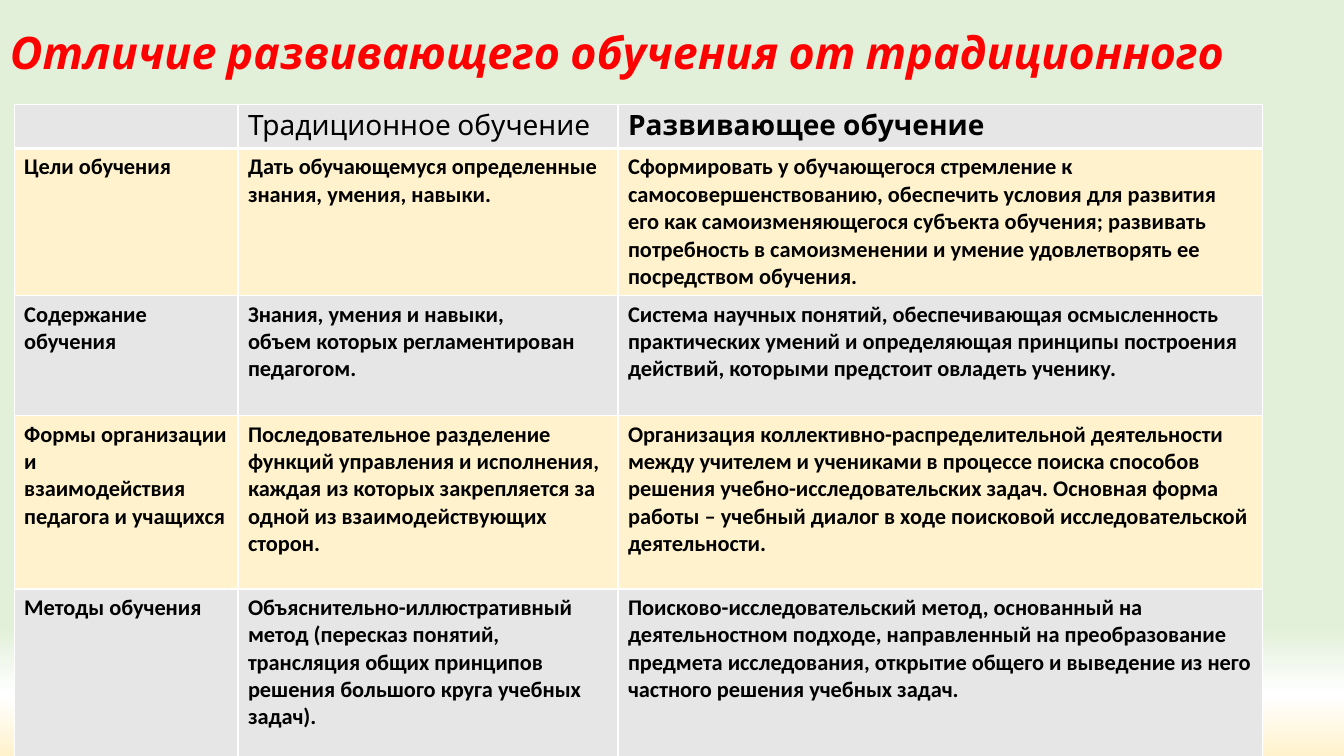
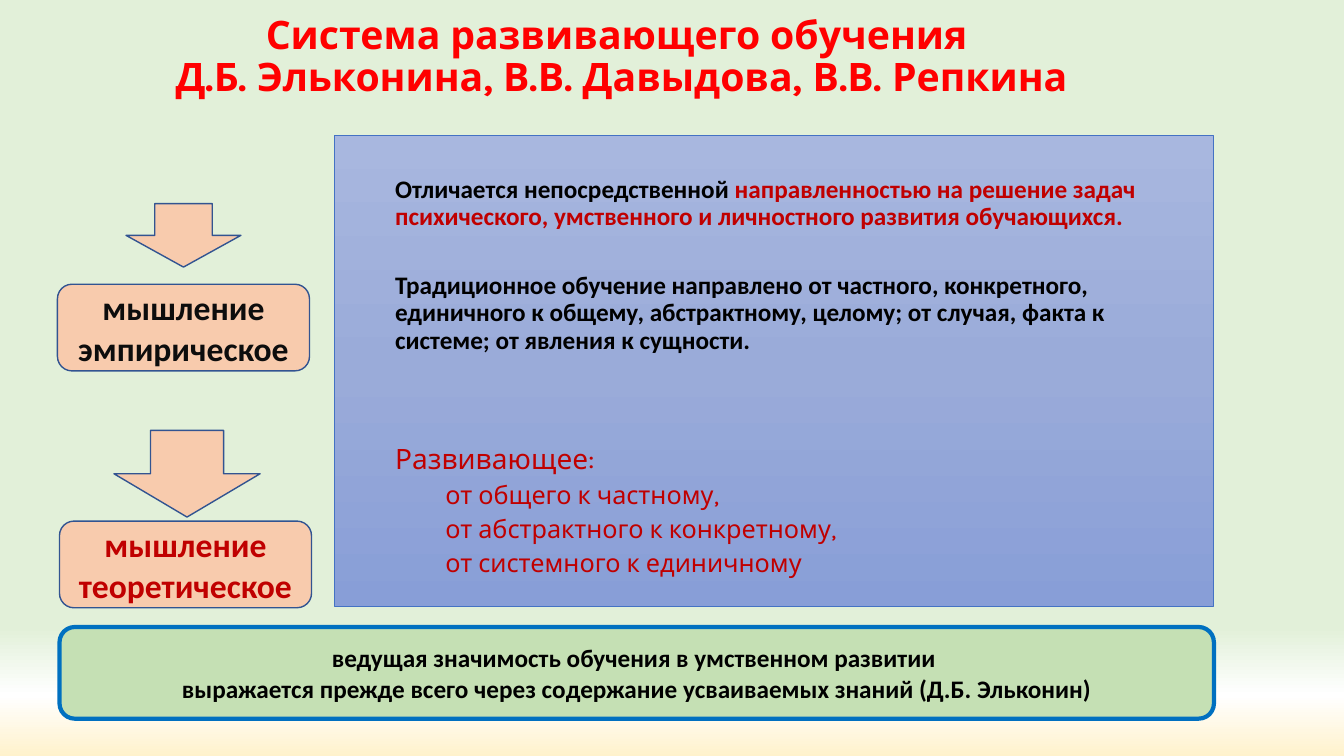
"""Build two slides comparing developmental and traditional teaching."""

import dataclasses

import pptx
import pptx.dml.color
import pptx.enum.shapes
import pptx.enum.text
import pptx.oxml
import pptx.oxml.ns
import pptx.util

Inches = pptx.util.Inches
Pt = pptx.util.Pt
ALIGN = pptx.enum.text.PP_ALIGN
ANCHOR = pptx.enum.text.MSO_ANCHOR
SHAPE = pptx.enum.shapes.MSO_SHAPE


@dataclasses.dataclass(frozen=True)
class Theme:
    """Colours, fonts and type sizes of the deck."""

    display_font: str = "Karla"
    body_font: str = "Calibri"
    title: str = "FF0000"
    ink: str = "000000"
    soft_ink: str = "0D0D0D"
    accent: str = "C00000"
    white: str = "FFFFFF"
    grey: str = "E7E6E6"
    cream: str = "FFF2CC"
    peach: str = "F8CBAD"
    peach_line: str = "325491"
    green: str = "C5E0B4"
    green_line: str = "0070C0"
    panel_line: str = "4472C4"
    backdrop: tuple = ((83, "E2F0D9"), (92, "FFFFFF"), (100, "FFF2CC"), (100, "C7D5ED"))
    panel: tuple = ((0, "A8B7DF"), (50, "9AABD9"), (100, "889ED7"))
    long_title_size: int = 32
    title_size: int = 28
    label_size: int = 24
    heading_size: int = 20
    text_size: int = 18
    table_size: int = 16
    line_spacing: float = 0.9


THEME = Theme()

COLUMN_WIDTHS = (2.22, 3.77, 6.39)
ROW_HEIGHTS = (0.42, 1.46, 1.19, 1.72, 1.7)
COMPARISON = (
    ("", "Традиционное обучение", "Развивающее обучение"),
    (
        "Цели обучения",
        "Дать обучающемуся определенные\nзнания, умения, навыки.",
        "Сформировать у обучающегося стремление к самосовершенствованию, "
        "обеспечить условия для развития его как самоизменяющегося субъекта обучения; "
        "развивать потребность в самоизменении и умение удовлетворять ее "
        "посредством обучения.",
    ),
    (
        "Содержание\nобучения",
        "Знания, умения и навыки,\nобъем которых регламентирован педагогом.",
        "Система научных понятий, обеспечивающая осмысленность практических умений "
        "и определяющая принципы построения действий, которыми предстоит овладеть ученику.",
    ),
    (
        "Формы организации и\nвзаимодействия педагога и учащихся",
        "Последовательное разделение функций управления и исполнения, "
        "каждая из которых закрепляется за одной из взаимодействующих сторон.",
        "Организация коллективно-распределительной деятельности между учителем "
        "и учениками в процессе поиска способов\n"
        "решения учебно-исследовательских задач. Основная форма работы – учебный диалог "
        "в ходе поисковой исследовательской деятельности.",
    ),
    (
        "Методы обучения",
        "Объяснительно-иллюстративный метод (пересказ понятий, трансляция общих "
        "принципов решения большого круга учебных задач).",
        "Поисково-исследовательский метод, основанный на деятельностном подходе, "
        "направленный на преобразование\n"
        "предмета исследования, открытие общего и выведение из него частного "
        "решения учебных задач.",
    ),
)


def rgb(value):
    """Return a colour object for a hex string."""
    return pptx.dml.color.RGBColor.from_string(value)


def style_run(run, size, color, font=THEME.body_font, bold=True, italic=False):
    """Apply type settings to one run."""
    run.font.size = Pt(size)
    run.font.name = font
    run.font.bold = bold
    run.font.italic = italic
    run.font.color.rgb = rgb(color)


def style_text(frame, size, color, **options):
    """Apply type settings to every run of a text frame."""
    for paragraph in frame.paragraphs:
        for run in paragraph.runs:
            style_run(run, size, color, **options)


def paint_gradient(fill, owner, stops):
    """Give a fill a top-to-bottom gradient with the given stops."""
    fill.gradient()
    fill.gradient_angle = 270
    stop_list = next(owner.iter(pptx.oxml.ns.qn("a:gsLst")))
    for old_stop in list(stop_list):
        stop_list.remove(old_stop)
    for position, color in stops:
        stop_list.append(pptx.oxml.parse_xml(
            f'<a:gs {pptx.oxml.ns.nsdecls("a")} pos="{position * 1000}">'
            f'<a:srgbClr val="{color}"/></a:gs>'
        ))


def add_title(slide, box, text, size, align=ALIGN.LEFT, italic=False):
    """Add the red slide title."""
    frame = slide.shapes.add_textbox(*map(Inches, box)).text_frame
    frame.word_wrap = True
    frame.vertical_anchor = ANCHOR.MIDDLE
    heading = frame.paragraphs[0]
    heading.text = text
    heading.alignment = align
    heading.line_spacing = THEME.line_spacing
    style_text(frame, size, THEME.title, font=THEME.display_font, italic=italic)


def add_block(slide, kind, box, line, width, fill=None):
    """Add an outlined shape without a shadow."""
    block = slide.shapes.add_shape(kind, *map(Inches, box))
    block.shadow.inherit = False
    block.line.color.rgb = rgb(line)
    block.line.width = Pt(width)
    if fill:
        block.fill.solid()
        block.fill.fore_color.rgb = rgb(fill)
    return block


def add_label(slide, box, text, size, color, fill, line, width):
    """Add a rounded box with centred bold text."""
    label = add_block(slide, SHAPE.ROUNDED_RECTANGLE, box, line, width, fill)
    frame = label.text_frame
    frame.word_wrap = True
    frame.vertical_anchor = ANCHOR.MIDDLE
    frame.text = text
    for paragraph in frame.paragraphs:
        paragraph.alignment = ALIGN.CENTER
    style_text(frame, size, color)


def add_panel_paragraph(paragraph, pieces, space_before, indent, size, **options):
    """Fill an indented panel paragraph with coloured pieces of text."""
    paragraph.alignment = ALIGN.LEFT
    paragraph.line_spacing = THEME.line_spacing
    paragraph.space_before = Pt(space_before)
    paragraph._p.get_or_add_pPr().set("marL", str(Inches(indent)))
    for text, color in pieces:
        run = paragraph.add_run()
        run.text = text
        style_run(run, size, color, **options)


def set_borders(cell, top, bottom):
    """Draw white cell borders with the given top and bottom widths."""
    properties = cell._tc.get_or_add_tcPr()
    for place, (side, width) in enumerate((("L", 1), ("R", 1), ("T", top), ("B", bottom))):
        properties.insert(place, pptx.oxml.parse_xml(
            f'<a:ln{side} {pptx.oxml.ns.nsdecls("a")} w="{Pt(width)}">'
            f'<a:solidFill><a:srgbClr val="{THEME.white}"/></a:solidFill></a:ln{side}>'
        ))


def add_comparison_table(slide, left, top):
    """Add the table of both kinds of teaching."""
    table = slide.shapes.add_table(
        len(ROW_HEIGHTS), len(COLUMN_WIDTHS), Inches(left), Inches(top),
        Inches(sum(COLUMN_WIDTHS)), Inches(sum(ROW_HEIGHTS)),
    ).table
    for column, width in zip(table.columns, COLUMN_WIDTHS):
        column.width = Inches(width)
    for row_index, (row, height) in enumerate(zip(table.rows, ROW_HEIGHTS)):
        row.height = Inches(height)
        for column_index, cell in enumerate(row.cells):
            cell.text = COMPARISON[row_index][column_index]
            cell.fill.solid()
            cell.fill.fore_color.rgb = rgb(THEME.cream if row_index % 2 else THEME.grey)
            set_borders(cell, 3 if row_index == 1 else 1, 3 if row_index == 0 else 1)
            if row_index:
                style_text(cell.text_frame, THEME.table_size, THEME.ink)
            else:
                style_text(cell.text_frame, THEME.heading_size, THEME.ink,
                           font=THEME.display_font, bold=column_index == 2)


def add_panel(slide, box):
    """Add the gradient panel that explains the system."""
    panel = add_block(slide, SHAPE.RECTANGLE, box, THEME.panel_line, 0.5)
    paint_gradient(panel.fill, panel._element, THEME.panel)
    frame = panel.text_frame
    frame.word_wrap = True
    frame.vertical_anchor = ANCHOR.TOP
    frame.margin_top = Inches(0.41)
    add_panel_paragraph(frame.paragraphs[0], (
        ("Отличается непосредственной", THEME.ink),
        (" направленностью на решение задач психического, умственного "
         "и личностного развития обучающихся.", THEME.accent),
    ), 0, 0.5, THEME.text_size)
    add_panel_paragraph(frame.add_paragraph(), ((
        "Традиционное обучение направлено от частного, конкретного, единичного "
        "к общему, абстрактному, целому; от случая, факта к системе; "
        "от явления к сущности.", THEME.ink,
    ),), 30, 0.5, THEME.text_size)
    conclusions = (
        ("Развивающее:", 65, 0.5, THEME.heading_size),
        ("от общего к частному,", 5, 1, THEME.text_size),
        ("от абстрактного к конкретному,", 5, 1, THEME.text_size),
        ("от системного к единичному", 5, 1, THEME.text_size),
    )
    for text, space_before, indent, size in conclusions:
        add_panel_paragraph(frame.add_paragraph(), ((text, THEME.accent),), space_before,
                            indent, size, font=THEME.display_font, bold=False)


def build_comparison(slide):
    """Build the slide with the comparison table."""
    add_title(slide, (0, 0.19, 13.33, 0.71), "Отличие развивающего обучения от традиционного",
              THEME.long_title_size, italic=True)
    add_comparison_table(slide, 0.14, 1.04)


def build_system(slide):
    """Build the slide about the system of developmental teaching."""
    add_title(slide, (0.3, 0, 11.73, 1.15),
              "Система развивающего обучения \nД.Б. Эльконина, В.В. Давыдова, В.В. Репкина",
              THEME.title_size, ALIGN.CENTER)
    add_panel(slide, (3.32, 1.34, 8.71, 4.68))
    add_label(slide, (0.59, 6.22, 11.45, 0.91),
              "ведущая значимость обучения в умственном развитии \n"
              "выражается прежде всего через содержание усваиваемых знаний (Д.Б. Эльконин)",
              THEME.text_size, THEME.ink, THEME.green, THEME.green_line, 3)
    thinking = (
        ("мышление теоретическое", THEME.accent, (0.59, 5.17), (1.13, 4.27, 1.45, 0.86)),
        ("мышление эмпирическое", THEME.soft_ink, (0.57, 2.82), (1.25, 2.02, 1.14, 0.63)),
    )
    for text, color, corner, arrow in thinking:
        add_label(slide, (*corner, 2.5, 0.86), text, THEME.label_size, color,
                  THEME.peach, THEME.peach_line, 1)
        add_block(slide, SHAPE.DOWN_ARROW, arrow, THEME.peach_line, 1, THEME.peach)


def main():
    """Create and save the presentation."""
    deck = pptx.Presentation()
    deck.slide_width = Inches(13.33)
    deck.slide_height = Inches(7.5)
    master = deck.slide_master
    paint_gradient(master.background.fill, master._element, THEME.backdrop)
    for build in (build_comparison, build_system):
        build(deck.slides.add_slide(deck.slide_layouts[6]))
    deck.save("out.pptx")


if __name__ == "__main__":
    main()
